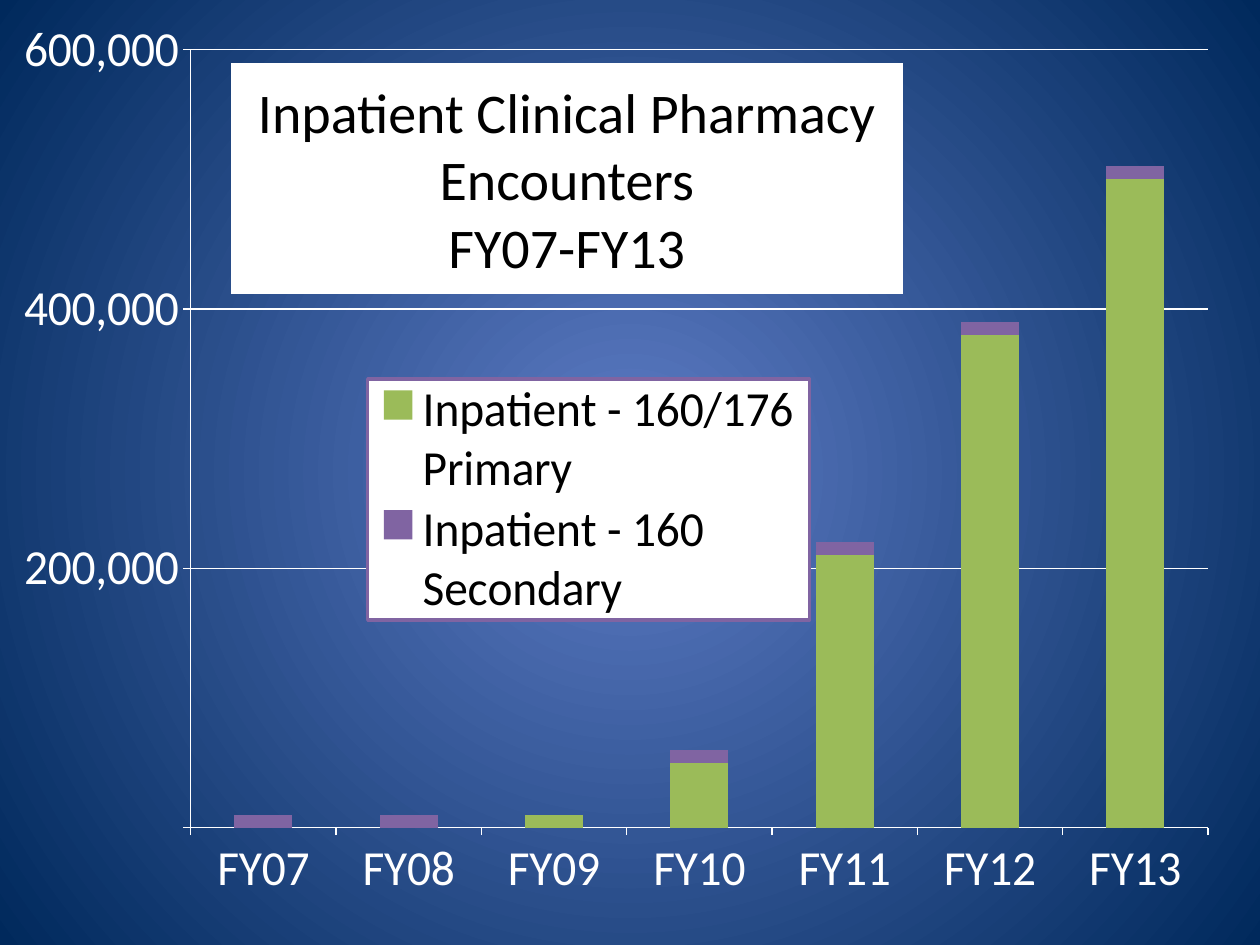
from lxml import etree
from pptx import Presentation
from pptx.chart.data import CategoryChartData
from pptx.dml.color import RGBColor
from pptx.enum import chart as charts, text
from pptx.oxml import parse_xml
from pptx.oxml.ns import nsdecls, qn
from pptx.util import Emu, Pt

PX = 914400 // 126
WHITE = RGBColor(0xFF, 0xFF, 0xFF)
BLACK = RGBColor(0, 0, 0)
GREEN = RGBColor(0x9B, 0xBB, 0x59)
PURPLE = RGBColor(0x80, 0x64, 0xA2)
BACKGROUND = [RGBColor(0x5E, 0x7C, 0xC5), RGBColor(0x00, 0x29, 0x5C)]

TITLE = "Inpatient Clinical Pharmacy Encounters\vFY07-FY13"
YEARS = ["FY07", "FY08", "FY09", "FY10", "FY11", "FY12", "FY13"]
SERIES = [
    ("Inpatient - 160/176 Primary", GREEN,
     [0, 0, 10000, 50000, 210000, 380000, 500000]),
    ("Inpatient - 160 Secondary", PURPLE,
     [10000, 10000, 0, 10000, 10000, 10000, 10000]),
]
# left, top, width, height in px
CHART_BOX = (24, 18, 1211, 935)
TITLE_BOX = (231, 63, 672, 231)
# left, top, width, height as shares of the chart
PLOT_LAYOUT = (0.109, 0.034, 0.868, 0.832)
LEGEND_LAYOUT = (0.26, 0.386, 0.377, 0.258)


def emu(box):
    return [Emu(length * PX) for length in box]


def set_font(font, size, color):
    for name, value in {"name": "Calibri", "size": Pt(size), "bold": False}.items():
        setattr(font, name, value)
    font.color.rgb = color


def manual_layout(shares, inner=False):
    target = '<c:layoutTarget val="inner"/>' if inner else ""
    modes = "".join(f'<c:{side}Mode val="edge"/>' for side in "xy")
    sizes = "".join(f'<c:{name} val="{share}"/>' for name, share in zip("xywh", shares))
    return parse_xml(f'<c:layout {nsdecls("c")}><c:manualLayout>{target}{modes}{sizes}'
                     '</c:manualLayout></c:layout>')


def paint_background(slide):
    fill = slide.background.fill
    fill.gradient()
    for stop, color in zip(fill.gradient_stops, BACKGROUND):
        stop.color.rgb = color
    linear = next(slide.element.iter(qn("a:lin")))
    path = etree.Element(qn("a:path"), path="circle")
    etree.SubElement(path, qn("a:fillToRect"), dict.fromkeys("ltrb", "50000"))
    linear.getparent().replace(linear, path)


def format_legend(chart):
    chart.has_legend = True
    legend = chart.legend
    legend.position = charts.XL_LEGEND_POSITION.BOTTOM
    legend.include_in_layout = False
    set_font(legend.font, 28, BLACK)
    element = next(chart.element.iter(qn("c:legend"))) if hasattr(chart, "element") \
        else legend._element
    for old in element.findall(qn("c:layout")):
        element.remove(old)
    overlay = element.find(qn("c:overlay"))
    overlay.addprevious(manual_layout(LEGEND_LAYOUT))
    overlay.addnext(parse_xml(
        f'<c:spPr {nsdecls("c", "a")}><a:solidFill><a:srgbClr val="{WHITE}"/></a:solidFill>'
        f'<a:ln w="{Pt(2)}"><a:solidFill><a:srgbClr val="{PURPLE}"/></a:solidFill></a:ln>'
        '</c:spPr>'))


def add_encounter_chart(slide):
    data = CategoryChartData()
    data.categories = YEARS
    for name, _, values in SERIES:
        data.add_series(name, values)
    chart = slide.shapes.add_chart(
        charts.XL_CHART_TYPE.COLUMN_STACKED, *emu(CHART_BOX), data).chart
    chart.has_title = False
    set_font(chart.font, 18, WHITE)

    plot = chart.plots[0]
    plot.gap_width, plot.overlap, plot.vary_by_categories = 150, 100, False
    for series, (_, color, _) in zip(plot.series, SERIES):
        series.format.fill.solid()
        series.format.fill.fore_color.rgb = color

    value_axis = chart.value_axis
    value_axis.has_major_gridlines = True
    value_axis.minimum_scale, value_axis.maximum_scale = 0, 600000
    value_axis.major_unit = 200000
    value_axis.tick_labels.number_format = "#,###"
    value_axis.tick_labels.number_format_is_linked = False
    for axis in (chart.category_axis, value_axis):
        axis.major_tick_mark = charts.XL_TICK_MARK.OUTSIDE
        set_font(axis.tick_labels.font, 28, WHITE)
    for part in (chart.category_axis, value_axis, value_axis.major_gridlines):
        part.format.line.color.rgb = WHITE
        part.format.line.width = Pt(0.75)

    format_legend(chart)
    plot_area = chart._chartSpace.chart.plotArea
    for old in plot_area.findall(qn("c:layout")):
        plot_area.remove(old)
    plot_area.insert(0, manual_layout(PLOT_LAYOUT, inner=True))


def format_title(slide):
    title = slide.shapes.title
    title.left, title.top, title.width, title.height = emu(TITLE_BOX)
    title.fill.solid()
    title.fill.fore_color.rgb = WHITE
    frame = title.text_frame
    frame.text = TITLE
    frame.word_wrap = True
    frame.auto_size = text.MSO_AUTO_SIZE.NONE
    frame.vertical_anchor = text.MSO_ANCHOR.MIDDLE
    paragraph = frame.paragraphs[0]
    paragraph.alignment = text.PP_ALIGN.CENTER
    for run in paragraph.runs:
        set_font(run.font, 32, BLACK)
    slide.shapes.element.append(title.element)  # in front of the chart


def main():
    presentation = Presentation()
    presentation.slide_width, presentation.slide_height = emu((1260, 945))
    slide = presentation.slides.add_slide(presentation.slide_layouts[5])
    paint_background(slide)
    add_encounter_chart(slide)
    format_title(slide)
    presentation.save("out.pptx")


if __name__ == "__main__":
    main()
